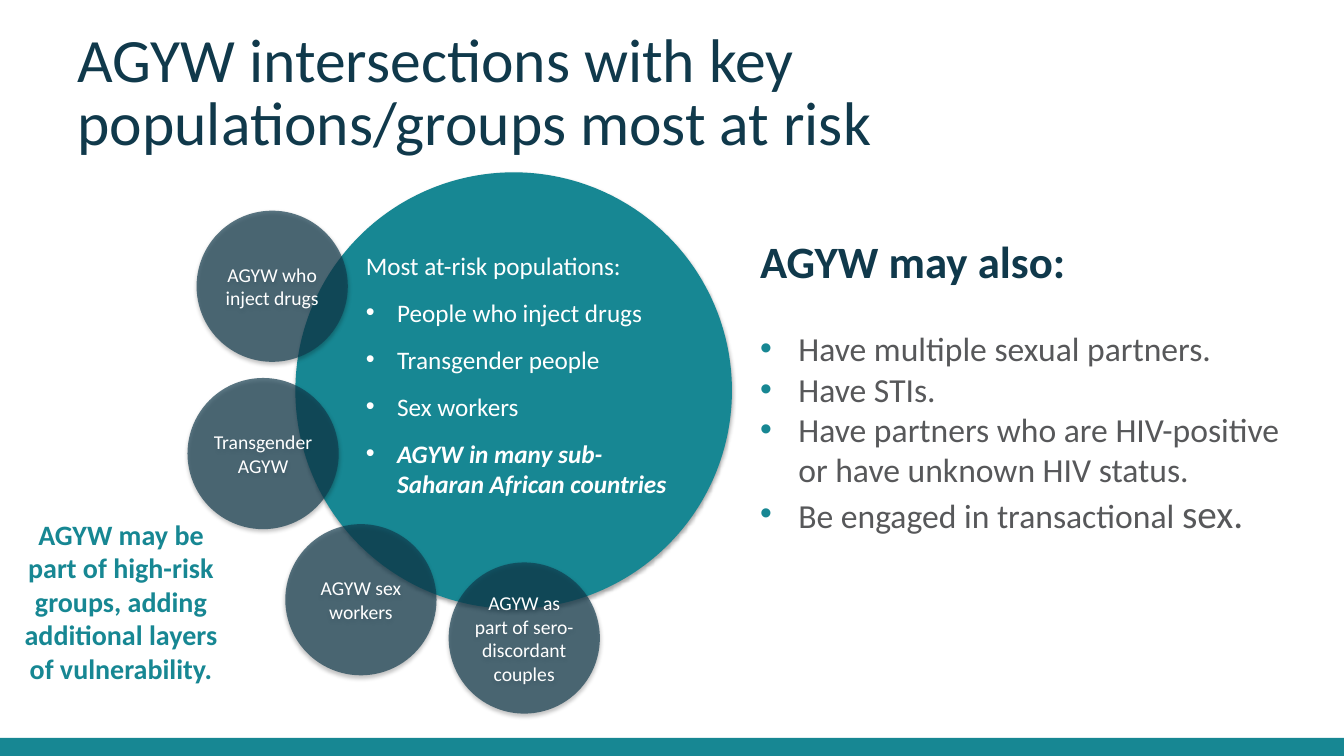
import pptx
import pptx.util
import pptx.dml.color
import pptx.enum.shapes
import pptx.enum.text
import pptx.oxml.ns
import lxml.etree

Inches, Pt = pptx.util.Inches, pptx.util.Pt
RGBColor = pptx.dml.color.RGBColor
SHAPE = pptx.enum.shapes.MSO_SHAPE
ALIGN = pptx.enum.text.PP_ALIGN
ANCHOR = pptx.enum.text.MSO_ANCHOR
qn = pptx.oxml.ns.qn

TITLE = "AGYW intersections with key populations/groups most at risk"
RISK_HEADING = "Most at-risk populations:"
RISK_GROUPS = ["People who inject drugs", "Transgender people", "Sex workers",
               "AGYW in many sub-Saharan African countries"]
OVERLAPS = [("AGYW who inject drugs", 1.95, 2.09), ("Transgender AGYW", 1.86, 3.75),
            ("AGYW sex workers", 2.83, 5.2),
            ("AGYW as part of sero- discordant couples", 4.45, 5.58)]
CALLOUT = "AGYW may be part of high-risk groups, adding additional layers of vulnerability."
ALSO_HEADING = "AGYW may also:"
ALSO = ["Have multiple sexual partners.", "Have STIs.",
        "Have partners who are HIV-positive or have unknown HIV status.",
        "Be engaged in transactional "]
ALSO_END = "sex."

FONT = "Calibri"
TEAL = RGBColor(0x17, 0x87, 0x93)
NAVY = RGBColor(0x10, 0x39, 0x4B)
GREY = RGBColor(0x57, 0x58, 0x5A)
WHITE = RGBColor(0xFF, 0xFF, 0xFF)
BLACK = RGBColor(0, 0, 0)
WIDTH, HEIGHT = 13.33, 7.5
BAND = 0.18
BIG, SMALL = 4.33, 1.5


def add_xml(parent, tag, **attrs):
    return lxml.etree.SubElement(parent, qn(tag), attrs)


def shape(s, kind, left, top, width, height, color, opacity=100):
    sp = s.shapes.add_shape(kind, Inches(left), Inches(top), Inches(width), Inches(height))
    sp.shadow.inherit = False
    sp.fill.solid()
    sp.fill.fore_color.rgb = color
    sp.line.fill.background()
    if opacity < 100:
        fill_color = sp.fill._xPr.find(qn("a:solidFill"))[0]
        add_xml(fill_color, "a:alpha", val=str(opacity * 1000))
    return sp


def circle(s, left, top, size, color, opacity=100):
    sp = shape(s, SHAPE.OVAL, left, top, size, size, color, opacity)
    effects = sp._element.spPr.find(qn("a:effectLst"))
    shadow = add_xml(effects, "a:outerShdw", blurRad=str(Pt(3.1)), dist=str(Pt(1.8)),
                     dir="5400000", rotWithShape="0")
    shade = add_xml(shadow, "a:srgbClr", val=str(BLACK))
    add_xml(shade, "a:alpha", val="35000")
    return sp


def text_box(s, left, top, width, height):
    tf = s.shapes.add_textbox(Inches(left), Inches(top), Inches(width), Inches(height)).text_frame
    tf.word_wrap = True
    return tf


def style(p, size, color, bold=False, italic=False, align=ALIGN.LEFT):
    p.alignment = align
    for r in p.runs:
        r.font.name = FONT
        r.font.size = Pt(size)
        r.font.color.rgb = color
        r.font.bold = bold
        r.font.italic = italic


def bullet(p, indent, color):
    pPr = p._p.get_or_add_pPr()
    pPr.set("marL", str(Inches(indent)))
    pPr.set("indent", str(-Inches(indent)))
    add_xml(add_xml(pPr, "a:buClr"), "a:srgbClr", val=str(color))
    add_xml(pPr, "a:buFont", typeface="Arial")
    add_xml(pPr, "a:buChar", char="•")


def main():
    prs = pptx.Presentation()
    prs.slide_width, prs.slide_height = Inches(WIDTH), Inches(HEIGHT)
    s = prs.slides.add_slide(prs.slide_layouts[6])

    shape(s, SHAPE.RECTANGLE, 0, HEIGHT - BAND, WIDTH, BAND, TEAL)
    circle(s, 2.93, 1.71, BIG, TEAL)

    tf = text_box(s, 3.53, 2.43, 3.34, 2.59)
    tf.text = "\n".join([RISK_HEADING] + RISK_GROUPS)
    for p in tf.paragraphs:
        last = p.text == RISK_GROUPS[-1]
        style(p, 18, WHITE, bold=last, italic=last)
        p.space_before = Pt(12)
        if p.text != RISK_HEADING:
            bullet(p, 0.31, WHITE)

    for label, left, top in OVERLAPS:
        tf = circle(s, left, top, SMALL, NAVY, 68).text_frame
        tf.margin_left = tf.margin_right = tf.margin_top = tf.margin_bottom = 0
        tf.vertical_anchor = ANCHOR.MIDDLE
        tf.word_wrap = True
        tf.text = label
        style(tf.paragraphs[0], 14, WHITE, align=ALIGN.CENTER)

    tf = text_box(s, 0.11, 5.08, 2.18, 1.78)
    tf.text = CALLOUT
    style(tf.paragraphs[0], 20, TEAL, bold=True, align=ALIGN.CENTER)

    tf = text_box(s, 7.44, 2.27, 5.53, 3.13)
    tf.text = "\n".join([ALSO_HEADING] + ALSO)
    heading, *items = tf.paragraphs
    style(heading, 32, NAVY, bold=True)
    heading.space_after = Pt(29)
    items[-1].add_run().text = ALSO_END
    for p in items:
        style(p, 24, GREY)
        bullet(p, 0.38, TEAL)
    items[-1].runs[-1].font.size = Pt(28)

    tf = text_box(s, 0.67, 0.27, 12, 1.06)
    tf.text = TITLE
    style(tf.paragraphs[0], 44, NAVY)
    tf.paragraphs[0].line_spacing = Pt(44.8)

    prs.save("out.pptx")


if __name__ == "__main__":
    main()
